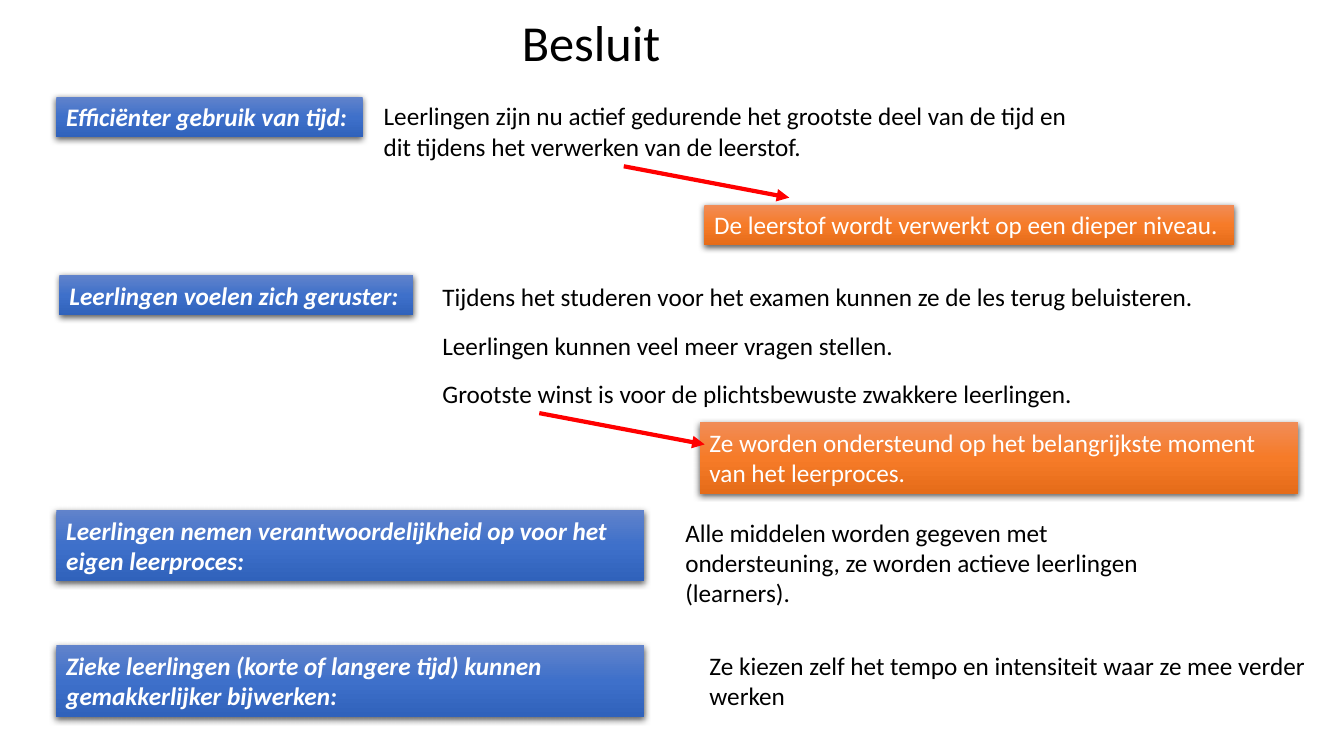
"""Build the concluding slide with labels, explanations and consequences."""
from copy import deepcopy
from dataclasses import dataclass

from lxml import etree
from pptx import Presentation
from pptx.dml.color import RGBColor
from pptx.enum.shapes import MSO_CONNECTOR, MSO_SHAPE
from pptx.enum.text import MSO_ANCHOR, MSO_AUTO_SIZE, PP_ALIGN
from pptx.oxml import parse_xml
from pptx.oxml.ns import qn
from pptx.util import Cm, Pt

RECT, STRAIGHT = MSO_SHAPE.RECTANGLE, MSO_CONNECTOR.STRAIGHT
LEFT, TOP, GROW = PP_ALIGN.LEFT, MSO_ANCHOR.TOP, MSO_AUTO_SIZE.SHAPE_TO_FIT_TEXT

BLUE = ("6183CB", "3E70CA", "3062BB")
ORANGE = ("F18C57", "F67B28", "E56C19")
BLACK, WHITE, RED = "000000", "FFFFFF", "FF0000"
ONE_LINE, TWO_LINES, THREE_LINES = 1.02, 1.8, 2.57
LABEL_X, POINT_X, LABEL_W = 1.42, 10.9, 14.81

PLAIN = {"name": "Calibri", "size": Pt(18)}
TITLE = PLAIN | {"size": Pt(36)}
STRONG = PLAIN | {"bold": True, "italic": True}

SHADOW = (
    '<a:outerShdw xmlns:a="http://schemas.openxmlformats.org/drawingml/2006/main" '
    'blurRad="57150" dist="19050" dir="5400000" algn="ctr" rotWithShape="0">'
    '<a:srgbClr val="000000"><a:alpha val="63000"/></a:srgbClr></a:outerShdw>'
)


@dataclass(frozen=True)
class Box:
    """A text with its place in centimetres."""
    text: str
    x: float
    y: float
    w: float
    h: float = ONE_LINE
    wrap: bool = False


@dataclass(frozen=True)
class Consequence:
    """An orange box and the start of the arrow that leads to it."""
    box: Box
    x: float
    y: float


HEADING = Box("Besluit", 12.9, 0.15, 4.04, TWO_LINES)
LABELS = [
    Box("Efficiënter gebruik van tijd:", LABEL_X, 2.44, 7.72),
    Box("Leerlingen voelen zich geruster:", 1.5, 6.93, 8.92),
    Box("Leerlingen nemen verantwoordelijkheid op voor het eigen leerproces:",
        LABEL_X, 12.85, LABEL_W, TWO_LINES, True),
    Box("Zieke leerlingen (korte of langere tijd) kunnen gemakkerlijker bijwerken:",
        LABEL_X, 16.26, LABEL_W, TWO_LINES, True),
]
EXPLANATIONS = [
    Box("Leerlingen zijn nu actief gedurende het grootste deel van de tijd en "
        "dit tijdens het verwerken van de leerstof.", 9.42, 2.41, 18.01, TWO_LINES, True),
    Box("Tijdens het studeren voor het examen kunnen ze de les terug beluisteren.",
        POINT_X, 6.96, 19.51),
    Box("Leerlingen kunnen veel meer vragen stellen.", POINT_X, 8.2, 12.01),
    Box("Grootste winst is voor de plichtsbewuste zwakkere leerlingen.",
        POINT_X, 9.4, 16.56),
    Box("Alle middelen worden gegeven met ondersteuning, ze worden actieve "
        "leerlingen (learners).", 17.02, 12.9, 13.67, THREE_LINES, True),
    Box("Ze kiezen zelf het tempo en intensiteit waar ze mee verder werken",
        17.63, 16.26, 15.82, TWO_LINES, True),
]
CONSEQUENCES = [
    Consequence(Box("De leerstof wordt verwerkt op een dieper niveau.",
                    17.75, 5.16, 13.36), 15.72, 4.19),
    Consequence(Box("Ze worden ondersteund op het belangrijkste moment van het leerproces.",
                    17.63, 10.64, 15.09, TWO_LINES, True), 13.59, 10.41),
]
ARROW_W, ARROW_H = 4.17, 0.79


def rgb(value: str) -> RGBColor:
    """Turn a hex string into a colour."""
    return RGBColor.from_string(value)


def write(sp, box: Box, font: dict, color: str) -> None:
    """Put the formatted text of a box into a shape."""
    tf = sp.text_frame
    tf.word_wrap, tf.auto_size, tf.vertical_anchor = box.wrap, GROW, TOP
    p = tf.paragraphs[0]
    p.alignment = LEFT
    r = p.add_run()
    r.text = box.text
    for name, value in font.items():
        setattr(r.font, name, value)
    r.font.color.rgb = rgb(color)


def add_text(shapes, box: Box, font: dict) -> None:
    """Add a plain text box."""
    sp = shapes.add_textbox(Cm(box.x), Cm(box.y), Cm(box.w), Cm(box.h))
    write(sp, box, font, BLACK)


def add_panel(shapes, box: Box, colors: tuple, font: dict) -> None:
    """Add a rectangle with a downward gradient and a soft shadow."""
    sp = shapes.add_shape(RECT, Cm(box.x), Cm(box.y), Cm(box.w), Cm(box.h))
    sp.fill.gradient()
    sp.fill.gradient_angle = 270
    stops = sp._element.spPr.find(qn("a:gradFill")).find(qn("a:gsLst"))
    stops.append(deepcopy(stops[0]))
    for i, (stop, color) in enumerate(zip(sp.fill.gradient_stops, colors)):
        stop.position = i / 2
        stop.color.rgb = rgb(color)
    sp.line.fill.background()
    sp.shadow.inherit = False
    sp._element.spPr.find(qn("a:effectLst")).append(parse_xml(SHADOW))
    write(sp, box, font, WHITE)


def add_arrow(shapes, x: float, y: float) -> None:
    """Add a red arrow that slopes down to the right."""
    cn = shapes.add_connector(STRAIGHT, Cm(x), Cm(y), Cm(x + ARROW_W), Cm(y + ARROW_H))
    cn.line.color.rgb = rgb(RED)
    cn.line.width = Pt(3)
    etree.SubElement(cn.line._get_or_add_ln(), qn("a:tailEnd"), type="triangle")
    etree.SubElement(cn._element.spPr, qn("a:effectLst"))


def main() -> None:
    """Draw the slide and save it."""
    prs = Presentation()
    prs.slide_width, prs.slide_height = Cm(33.87), Cm(19.05)
    s = prs.slides.add_slide(prs.slide_layouts[6])
    add_text(s.shapes, HEADING, TITLE)
    for label in LABELS:
        add_panel(s.shapes, label, BLUE, STRONG)
    for explanation in EXPLANATIONS:
        add_text(s.shapes, explanation, PLAIN)
    for item in CONSEQUENCES:
        group = s.shapes.add_group_shape()
        add_panel(group.shapes, item.box, ORANGE, PLAIN)
        add_arrow(group.shapes, item.x, item.y)
    prs.save("out.pptx")


if __name__ == "__main__":
    main()
